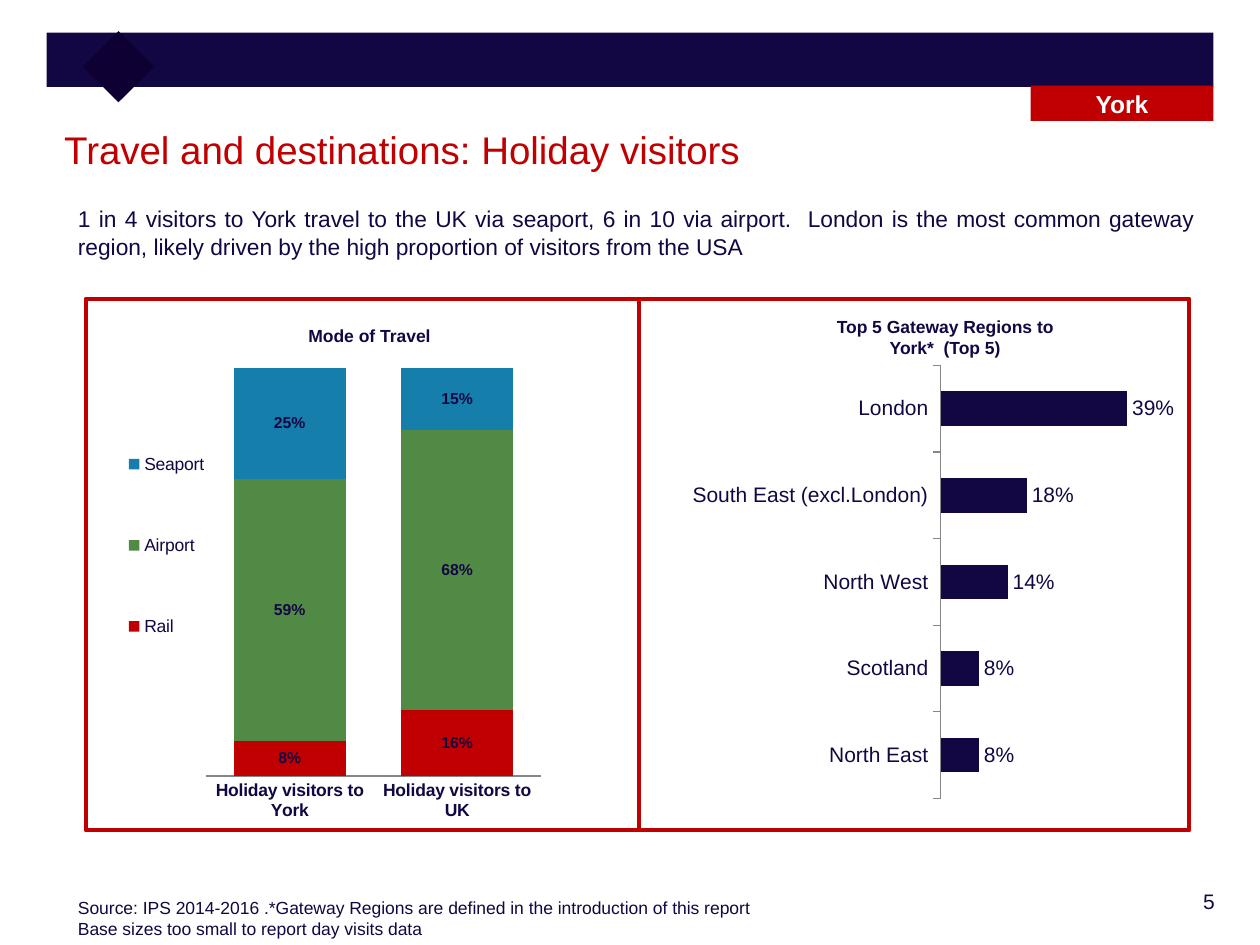
import pptx
import pptx.util
import pptx.chart.data
import pptx.dml.color
import pptx.enum.chart
import pptx.enum.shapes
import pptx.enum.text
import pptx.oxml
import pptx.oxml.ns

RGB = pptx.dml.color.RGBColor
NAVY = RGB(0x12, 0x07, 0x42)
DARK = RGB(0x0E, 0x00, 0x33)
RED = RGB(0xC0, 0x00, 0x00)
GREEN = RGB(0x51, 0x8A, 0x45)
BLUE = RGB(0x15, 0x7E, 0xAB)
GREY = RGB(0x86, 0x86, 0x86)
WHITE = RGB(0xFF, 0xFF, 0xFF)

ALIGN = pptx.enum.text.PP_ALIGN
ANCHOR = pptx.enum.text.MSO_ANCHOR
KIND = pptx.enum.chart.XL_CHART_TYPE
LABEL = pptx.enum.chart.XL_LABEL_POSITION
TICK = pptx.enum.chart.XL_TICK_MARK
RECT = pptx.enum.shapes.MSO_SHAPE.RECTANGLE

# The slide is a grid of 100 columns by 75 rows
COLS, ROWS = 100, 75
UNIT = pptx.util.Inches(10) / COLS


def span(box):
    """Turn grid columns and rows into slide lengths."""
    return [round(part * UNIT) for part in box]


def inner(box, left, top, width, height):
    """Offset a part from the corner of its box."""
    return box[0] + left, box[1] + top, width, height


def style(font, size, color=NAVY, bold=False, name="Arial"):
    font.name = name
    font.size = pptx.util.Pt(size)
    font.bold = bold
    font.color.rgb = color


def write(frame, lines, size, color=NAVY, bold=False, align=ALIGN.LEFT):
    frame.word_wrap = True
    for num, line in enumerate(lines):
        para = frame.add_paragraph() if num else frame.paragraphs[0]
        para.alignment = align
        run = para.add_run()
        run.text = line
        style(run.font, size, color, bold)


def add_text(slide, box, lines, size, **look):
    shape = slide.shapes.add_textbox(*span(box))
    write(shape.text_frame, lines, size, **look)


def add_rect(slide, box, fill=None, line=None):
    shape = slide.shapes.add_shape(RECT, *span(box))
    shape.shadow.inherit = False
    if fill is None:
        shape.fill.background()
    else:
        shape.fill.solid()
        shape.fill.fore_color.rgb = fill
    if line is None:
        shape.line.fill.background()
    else:
        shape.line.color.rgb = line
        shape.line.width = pptx.util.Pt(2.25)
    return shape


def set_layout(prior, parent, shares, target=None):
    """Fix a chart part at shares of the chart's size."""
    qn = pptx.oxml.ns.qn
    for old in parent.findall(qn("c:layout")):
        parent.remove(old)
    aim = f'<c:layoutTarget val="{target}"/>' if target else ""
    modes = '<c:xMode val="edge"/><c:yMode val="edge"/>'
    sizes = "".join(f'<c:{key} val="{val}"/>' for key, val in zip("xywh", shares))
    node = pptx.oxml.parse_xml(
        f'<c:layout {pptx.oxml.ns.nsdecls("c")}>'
        f"<c:manualLayout>{aim}{modes}{sizes}</c:manualLayout></c:layout>")
    if prior is None:
        parent.insert(0, node)
    else:
        prior.addnext(node)


def add_chart(slide, box, kind, cats, rows, gap, plot, top):
    """Draw a bar chart; each row is a name, its values and a colour."""
    data = pptx.chart.data.CategoryChartData(number_format="0%")
    data.categories = cats
    for name, vals, _ in rows:
        data.add_series(name, vals)
    chart = slide.shapes.add_chart(kind, *span(box), data).chart
    chart.has_title = False
    chart.has_legend = False
    style(chart.font, 10)
    bars = chart.plots[0]
    bars.gap_width = gap
    bars.vary_by_categories = False
    for series, (_, _, color) in zip(bars.series, rows):
        series.format.fill.solid()
        series.format.fill.fore_color.rgb = color
        series.invert_if_negative = False
    vals = chart.value_axis
    vals.visible = False
    vals.has_major_gridlines = False
    vals.minimum_scale = 0
    vals.maximum_scale = top
    chart.category_axis.format.line.color.rgb = GREY
    area = chart._chartSpace.chart.plotArea
    set_layout(None, area, plot, "inner")
    return chart


def add_labels(bars, size, bold, spot):
    bars.has_data_labels = True
    labels = bars.data_labels
    labels.show_value = True
    labels.number_format = "0%"
    labels.number_format_is_linked = False
    labels.position = spot
    style(labels.font, size, bold=bold)


def draw_head(slide, box):
    """Banner with its diamond and the city tag."""
    add_rect(slide, inner(box, 0, 0, box[2], 4.3), fill=NAVY)
    add_rect(slide, inner(box, 3.7, 0.7, 4, 4), fill=DARK).rotation = 45
    tag = add_rect(slide, inner(box, box[2] - 14.5, 4.2, 14.5, 2.8), fill=RED)
    tag.text_frame.vertical_anchor = ANCHOR.MIDDLE
    write(tag.text_frame, ["York"], 14, WHITE, True, ALIGN.CENTER)


def draw_title(slide, box):
    title = slide.shapes.title
    title.left, title.top, title.width, title.height = span(box)
    title.text_frame.vertical_anchor = ANCHOR.TOP
    write(title.text_frame, ["Travel and destinations: Holiday visitors"], 22, RED)


def draw_travel(slide, box):
    """Left panel: stacked shares by mode of travel."""
    add_text(slide, inner(box, 16.7, 1.6, 14.7, 3.1), ["Mode of Travel"], 10, bold=True)
    rows = [("Rail", (0.08, 0.16), RED),
            ("Airport", (0.59, 0.68), GREEN),
            ("Seaport", (0.25, 0.15), BLUE)]
    chart = add_chart(slide, inner(box, 0.7, 3.2, 36.9, 39),
                      KIND.COLUMN_STACKED_100,
                      ["Holiday visitors to York", "Holiday visitors to UK"],
                      rows, 49, (0.24, 0.06, 0.72, 0.83), 1)
    chart.plots[0].overlap = 100
    add_labels(chart.plots[0], 9, True, LABEL.CENTER)
    axis = chart.category_axis
    axis.major_tick_mark = TICK.NONE
    style(axis.tick_labels.font, 10, bold=True)
    # Legend spread down the left side
    chart.has_legend = True
    key = chart.legend
    key.position = pptx.enum.chart.XL_LEGEND_POSITION.LEFT
    key.include_in_layout = False
    style(key.font, 10)
    node = key._element
    set_layout(node.find(pptx.oxml.ns.qn("c:legendPos")), node, (0.06, 0.11, 0.19, 0.62))
    add_rect(slide, box, line=RED)


def draw_gates(slide, box):
    """Right panel: ranked gateway regions."""
    add_text(slide, inner(box, 13.7, 0.9, 21.2, 4.6),
             ["Top 5 Gateway Regions to York*  (Top 5)"], 10, bold=True, align=ALIGN.CENTER)
    cats = ["London", "South East (excl.London)", "North West", "Scotland", "North East"]
    rows = [("Series 1", (0.39, 0.18, 0.14, 0.08, 0.08), NAVY)]
    chart = add_chart(slide, inner(box, 3.8, 4.6, 38.8, 35.8), KIND.BAR_CLUSTERED,
                      cats, rows, 150, (0.52, 0.02, 0.44, 0.96), 0.45)
    style(chart.font, 18, name="Calibri")
    add_labels(chart.plots[0], 12, False, LABEL.OUTSIDE_END)
    axis = chart.category_axis
    axis.reverse_order = True
    axis.major_tick_mark = TICK.OUTSIDE
    style(axis.tick_labels.font, 12)
    add_rect(slide, box, line=RED)


def draw_foot(slide, box):
    """Source note and page number."""
    add_text(slide, inner(box, 0, 0.7, 90.8, 6.1), [
        "Source: IPS 2014-2016 .*Gateway Regions are defined in the introduction of this report",
        "Base sizes too small to report day visits data"], 10)
    add_text(slide, inner(box, 80.1, 0, 12.1, 3.6), ["5"], 12, align=ALIGN.RIGHT)


def main():
    deck = pptx.Presentation()
    deck.slide_width, deck.slide_height = span((0, 0, COLS, ROWS))[2:]
    slide = deck.slides.add_slide(deck.slide_layouts[5])
    draw_head(slide, (3.7, 2.6, 92.6, 7))
    draw_title(slide, (4.1, 9.5, 92.1, 6.1))
    add_text(slide, (5.2, 15.8, 90.5, 7.4), [
        "1 in 4 visitors to York travel to the UK via seaport, 6 in 10 via airport.  "
        "London is the most common gateway region, likely driven by the high "
        "proportion of visitors from the USA"], 13, align=ALIGN.JUSTIFY)
    draw_travel(slide, (6.8, 23.7, 43.9, 42.2))
    draw_gates(slide, (50.7, 23.7, 43.7, 42.2))
    draw_foot(slide, (5.2, 70, 92.2, 5))
    deck.save("out.pptx")


if __name__ == "__main__":
    main()
